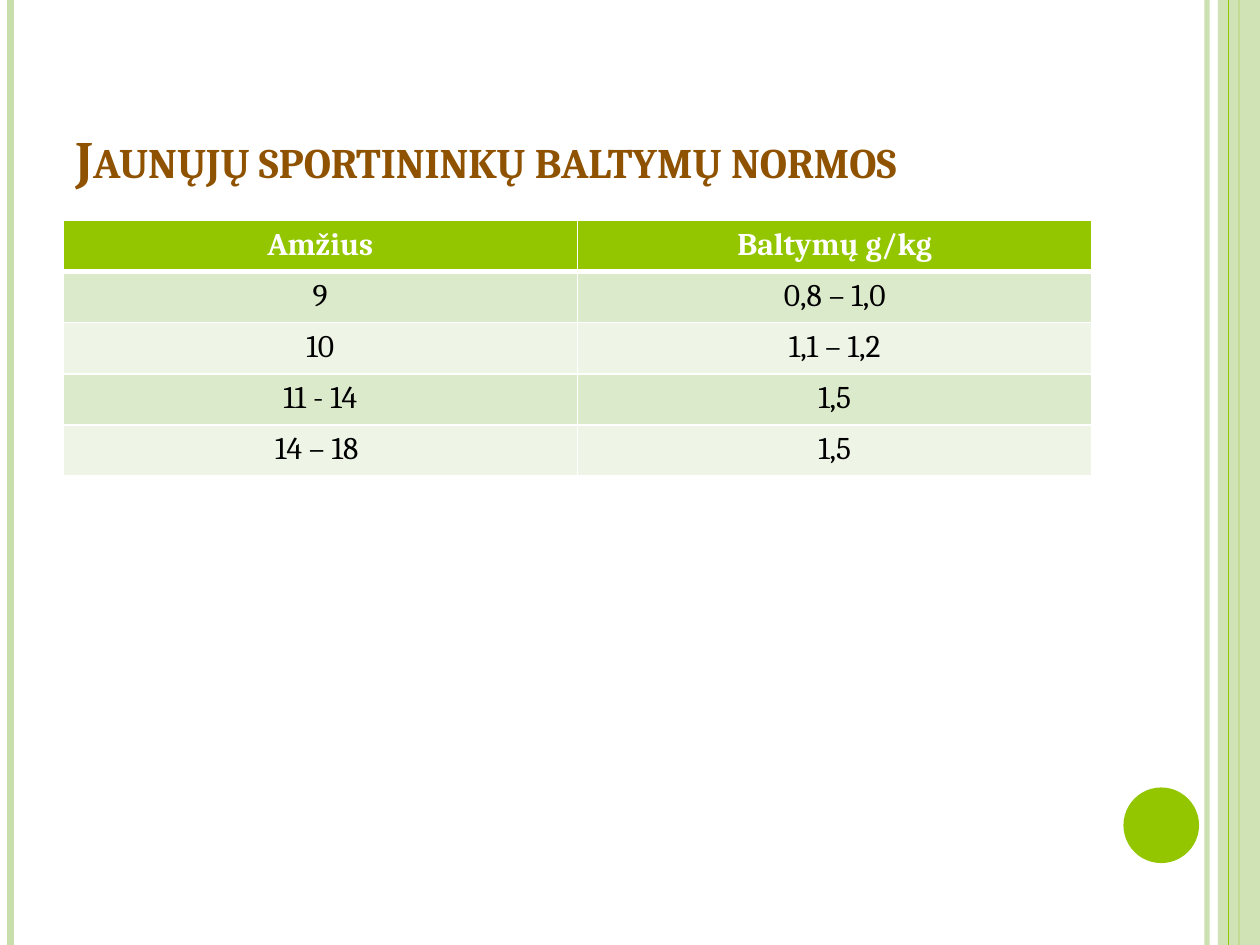
from lxml import etree
from pptx import Presentation
from pptx.dml.color import RGBColor
from pptx.enum import shapes, text
from pptx.oxml.ns import qn
from pptx.util import Pt

theme = {
    "green": "94C600", "pale": "C8DFAB", "brown": "8F5201", "white": "FFFFFF",
    "black": "000000", "bands": ("DCEACC", "EEF5E7"),
    "font": "Cambria", "title": 30, "body": 18,
}


def set_font(run, **values):
    run.font.color.rgb = RGBColor.from_string(values.pop("color"))
    for key, value in values.items():
        setattr(run.font, key, value)


def set_alpha(fill_parent, percent):
    color = next(fill_parent.iter(qn("a:srgbClr")))
    etree.SubElement(color, qn("a:alpha")).set("val", str(percent * 1000))


prs = Presentation()
prs.slide_width, prs.slide_height = Pt(720), Pt(540)
slide = prs.slides.add_slide(prs.slide_layouts[6])

stripes = [
    (689.8, "pale", 3, 93),
    (6, "pale", 4.5, 100),
    (708, "green", 1.5, 100),
    (None, "pale", 0, 87),
    (702, "green", 0.75, 100),
]
for x, color, width, opacity in stripes:
    if x is None:
        side_band = slide.shapes.add_shape(
            shapes.MSO_SHAPE.RECTANGLE, Pt(696), Pt(0), Pt(24), Pt(540))
        side_band.shadow.inherit = False
        side_band.fill.solid()
        side_band.fill.fore_color.rgb = RGBColor.from_string(theme[color])
        side_band.line.fill.background()
        set_alpha(side_band._element.spPr, opacity)
        continue
    stripe = slide.shapes.add_connector(
        shapes.MSO_CONNECTOR.STRAIGHT, Pt(x), Pt(0), Pt(x), Pt(540))
    stripe.line.color.rgb = RGBColor.from_string(theme[color])
    stripe.line.width = Pt(width)
    if opacity < 100:
        set_alpha(stripe._element.spPr, opacity)
    etree.SubElement(stripe._element.spPr, qn("a:effectLst"))

page_dot = slide.shapes.add_shape(
    shapes.MSO_SHAPE.OVAL, Pt(642), Pt(450), Pt(43.2), Pt(43.2))
page_dot.shadow.inherit = False
page_dot.fill.solid()
page_dot.fill.fore_color.rgb = RGBColor.from_string(theme["green"])
page_dot.line.fill.background()

title = slide.shapes.add_textbox(Pt(36), Pt(21.6), Pt(588), Pt(90)).text_frame
title.word_wrap = True
title.vertical_anchor = text.MSO_ANCHOR.BOTTOM
heading = title.paragraphs[0].add_run()
heading.text = "Jaunųjų sportininkų baltymų normos"
set_font(heading, color=theme["brown"], name=theme["font"],
         size=Pt(theme["title"]), bold=True)
heading._r.get_or_add_rPr().set("cap", "small")

norms = [
    ("Amžius", "Baltymų g/kg"),
    ("9", "0,8 – 1,0"),
    ("10", "1,1 – 1,2"),
    ("11 - 14", "1,5"),
    ("14 – 18 ", "1,5"),
]
norms_table = slide.shapes.add_table(
    len(norms), 2, Pt(36), Pt(126), Pt(588), Pt(146)).table
for row, values in enumerate(norms):
    is_header = row == 0
    norms_table.rows[row].height = Pt(29.2)
    cell_fill = theme["green"] if is_header else theme["bands"][(row - 1) % 2]
    border_widths = {"lnL": 1, "lnR": 1, "lnT": 3 if row == 1 else 1,
                     "lnB": 3 if is_header else 1}
    for column, value in enumerate(values):
        cell = norms_table.cell(row, column)
        cell_format = cell._tc.get_or_add_tcPr()
        for side, width in border_widths.items():
            border = etree.SubElement(cell_format, qn(f"a:{side}"), w=str(Pt(width)))
            border_fill = etree.SubElement(border, qn("a:solidFill"))
            etree.SubElement(border_fill, qn("a:srgbClr"), val=theme["white"])
        cell.fill.solid()
        cell.fill.fore_color.rgb = RGBColor.from_string(cell_fill)
        paragraph = cell.text_frame.paragraphs[0]
        paragraph.alignment = text.PP_ALIGN.CENTER
        entry = paragraph.add_run()
        entry.text = value
        set_font(entry, color=theme["white" if is_header else "black"],
                 name=theme["font"], size=Pt(theme["body"]), bold=is_header)

prs.save("out.pptx")
